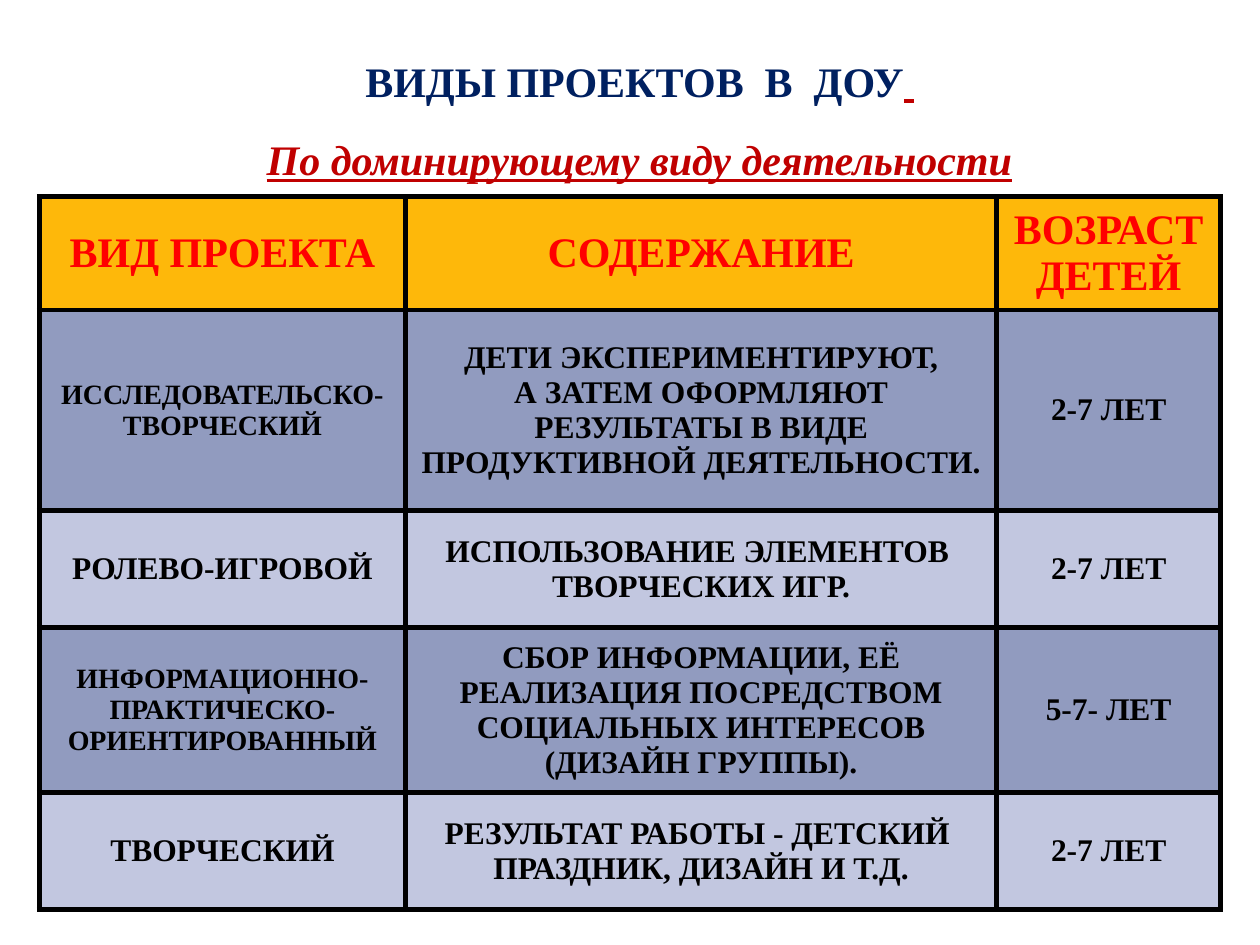
from lxml import etree
from pptx import Presentation
from pptx.dml.color import RGBColor
from pptx.enum.text import MSO_ANCHOR, MSO_AUTO_SIZE, PP_ALIGN
from pptx.oxml.ns import qn
from pptx.util import Cm, Pt

CENTER, TOP, MIDDLE = PP_ALIGN.CENTER, MSO_ANCHOR.TOP, MSO_ANCHOR.MIDDLE
FONT = "Times New Roman"
COLORS = {
    "navy": "002060", "crimson": "C00000", "red": "FF0000", "black": "000000",
    "amber": "FEB80A", "slate": "919BBF", "lavender": "C2C7E0",
}

# Content: title paragraphs of (text, format) spans, then table rows
NAVY = {"color": "navy", "size": 24, "bold": True}
CRIMSON = {"color": "crimson", "size": 24, "bold": True, "italic": True, "underline": True}
TITLE = [
    [("ВИДЫ ПРОЕКТОВ  В  ДОУ", NAVY), (" ", {**CRIMSON, "name": "Calibri"})],
    [("По доминирующему виду деятельности", CRIMSON)],
]
HEADER = ["ВИД ПРОЕКТА", "СОДЕРЖАНИЕ", "ВОЗРАСТ ДЕТЕЙ"]
PROJECTS = [
    ["ИССЛЕДОВАТЕЛЬСКО-ТВОРЧЕСКИЙ",
     "ДЕТИ ЭКСПЕРИМЕНТИРУЮТ,\n"
     "А ЗАТЕМ ОФОРМЛЯЮТ РЕЗУЛЬТАТЫ В ВИДЕ ПРОДУКТИВНОЙ ДЕЯТЕЛЬНОСТИ.",
     "2-7 ЛЕТ"],
    ["РОЛЕВО-ИГРОВОЙ", "ИСПОЛЬЗОВАНИЕ ЭЛЕМЕНТОВ  ТВОРЧЕСКИХ ИГР.", "2-7 ЛЕТ"],
    ["ИНФОРМАЦИОННО-ПРАКТИЧЕСКО-ОРИЕНТИРОВАННЫЙ",
     "СБОР ИНФОРМАЦИИ, ЕЁ РЕАЛИЗАЦИЯ ПОСРЕДСТВОМ СОЦИАЛЬНЫХ ИНТЕРЕСОВ\n"
     "(ДИЗАЙН ГРУППЫ).",
     "5-7- ЛЕТ"],
    ["ТВОРЧЕСКИЙ", "РЕЗУЛЬТАТ РАБОТЫ - ДЕТСКИЙ  ПРАЗДНИК, ДИЗАЙН И Т.Д.", "2-7 ЛЕТ"],
]
COLUMN_WIDTHS = [7.39, 11.91, 4.52]
ROW_HEIGHTS = [2.29, 4.04, 2.36, 3.33, 2.36]
LONG_NAME = 20  # project names longer than this are set smaller


def add_span(para, text, style):
    span = para.add_run()
    span.text = text
    values = {"name": FONT, **style}
    span.font.color.rgb = RGBColor.from_string(COLORS[values.pop("color")])
    values["size"] = Pt(values["size"])
    for name, value in values.items():
        setattr(span.font, name, value)


def fill_frame(frame, paragraphs, spacing=None):
    for index, spans in enumerate(paragraphs):
        para = frame.add_paragraph() if index else frame.paragraphs[0]
        para.alignment = CENTER
        para.line_spacing = spacing
        for text, style in spans:
            add_span(para, text, style)


def add_borders(cell, color, width):
    properties = cell._tc.get_or_add_tcPr()
    for side in ("a:lnL", "a:lnR", "a:lnT", "a:lnB"):
        line = etree.SubElement(properties, qn(side), w=str(Pt(width)))
        fill = etree.SubElement(line, qn("a:solidFill"))
        etree.SubElement(fill, qn("a:srgbClr"), val=color)


def cell_style(row, column, text):
    if row == 0:
        return "amber", {"color": "red", "size": 24, "bold": True}
    size = 16 if column == 0 and len(text) > LONG_NAME else 18
    return ("slate" if row % 2 else "lavender"), {"color": "black", "size": size, "bold": True}


deck = Presentation()
deck.slide_width, deck.slide_height = Cm(25.4), Cm(19.05)
page = deck.slides.add_slide(deck.slide_layouts[5])

# Title
title = page.shapes.title
title.left, title.top, title.width, title.height = Cm(1.09), Cm(0.41), Cm(23.6), Cm(3.18)
frame = title.text_frame
for name, value in {"auto_size": MSO_AUTO_SIZE.NONE, "vertical_anchor": TOP, "word_wrap": True}.items():
    setattr(frame, name, value)
fill_frame(frame, TITLE, Pt(45))

# Table
rows = [HEADER] + PROJECTS
table = page.shapes.add_table(
    len(rows), len(HEADER), Cm(0.79), Cm(3.96), Cm(sum(COLUMN_WIDTHS)), Cm(sum(ROW_HEIGHTS))
).table
for column, width in zip(table.columns, COLUMN_WIDTHS):
    column.width = Cm(width)
for row, height in zip(table.rows, ROW_HEIGHTS):
    row.height = Cm(height)

for row, texts in enumerate(rows):
    for column, text in enumerate(texts):
        cell = table.cell(row, column)
        background, style = cell_style(row, column, text)
        cell.vertical_anchor = MIDDLE
        add_borders(cell, COLORS["black"], 3)
        cell.fill.solid()
        cell.fill.fore_color.rgb = RGBColor.from_string(COLORS[background])
        fill_frame(cell.text_frame, [[(line, style)] for line in text.split("\n")])

deck.save("out.pptx")
